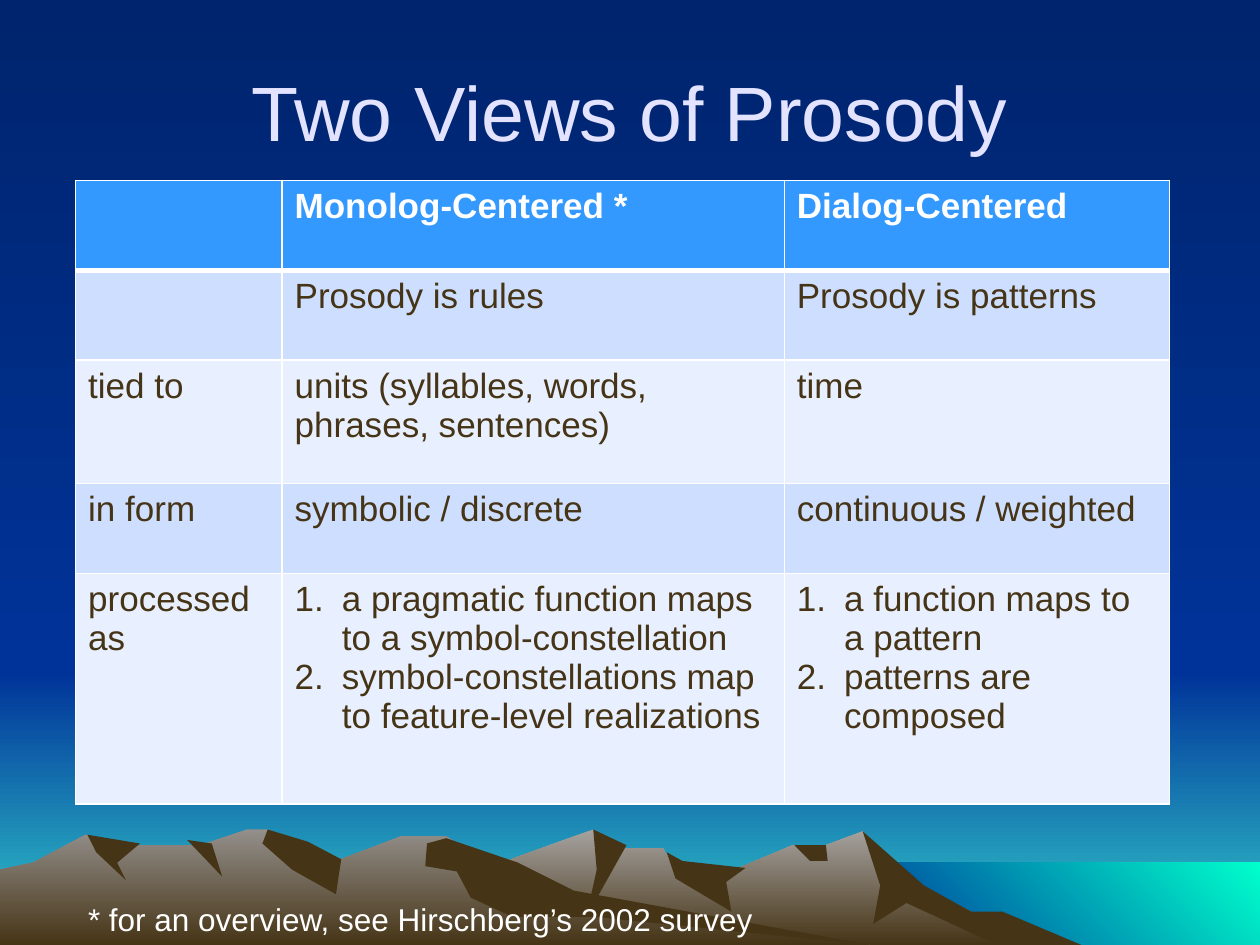
from pptx import Presentation
from pptx.dml.color import RGBColor
from pptx.enum.shapes import MSO_SHAPE
from pptx.enum.text import MSO_ANCHOR, PP_ALIGN
from pptx.oxml import parse_xml
from pptx.oxml.ns import nsdecls
from pptx.util import Pt

SLIDE_WIDTH, SLIDE_HEIGHT = 720, 540
FONT = "Arial"
NAVY, BLUE, BROWN, WHITE = "00246D", "003399", "463416", "FFFFFF"
HEADER_FILL, BAND_FILLS = "3399FF", ("CEDEFF", "E8EFFF")

# Outlines in points, back to front; a fill pair is a gradient from top to bottom.
RIDGES = [
    (("A5A29F", BROWN), [
        (591, 66), (520, 29), (493, 1), (472, 9), (453, 9), (408, 28), (386, 23),
        (379, 11), (350, 11), (339, 0), (284, 20), (235, 37), (186, 66)]),
    (BROWN, [
        (573, 47), (555, 47), (528, 32), (493, 1), (503, 32), (499, 54), (518, 42),
        (570, 66), (618, 66)]),
    (BROWN, [
        (339, 0), (341, 23), (335, 50), (358, 9)]),
    (BROWN, [
        (381, 13), (386, 28), (418, 47), (415, 30), (426, 22), (390, 18)]),
    (BROWN, [
        (454, 9), (463, 18), (473, 18), (472, 9)]),
    (("938F8B", BROWN), [
        (497, 66), (311, 39), (255, 4), (229, 4), (195, 17), (170, 17), (153, 0),
        (141, 0), (115, 9), (68, 9), (49, 3), (19, 19), (0, 23), (0, 66)]),
    (BROWN, [
        (153, 0), (150, 8), (167, 23), (192, 37), (195, 17), (176, 7)]),
    (BROWN, [
        (255, 5), (244, 8), (243, 21), (261, 24), (269, 39), (293, 50), (340, 50),
        (497, 66), (328, 35), (296, 19)]),
    (BROWN, [
        (107, 6), (121, 8), (127, 27)]),
    (BROWN, [
        (50, 3), (80, 8), (67, 19), (72, 29), (55, 13)]),
]

COLUMN_WIDTHS = (118, 287, 220)
ROW_HEIGHTS = (51.4, 51.4, 70.6, 51.2, 132)
# A list in a cell is numbered.
VIEWS = [
    ("", "Monolog-Centered *", "Dialog-Centered"),
    ("", "Prosody is rules", "Prosody is patterns"),
    ("tied to", "units (syllables, words, phrases, sentences)", "time"),
    ("in form", "symbolic / discrete", "continuous / weighted"),
    ("processed as",
     ["a pragmatic function maps to a symbol-constellation",
      "symbol-constellations map to feature-level realizations"],
     ["a function maps to a pattern", "patterns are composed"]),
]


def rgb(color):
    return RGBColor.from_string(color)


def paint(fill, color, angle=270):
    """Fill with one colour, or with a gradient between a pair of colours."""
    if isinstance(color, str):
        fill.solid()
        fill.fore_color.rgb = rgb(color)
        return
    fill.gradient()
    fill.gradient_angle = angle
    for stop, stop_color in zip(fill.gradient_stops, color):
        stop.color.rgb = rgb(stop_color)


def style(paragraph, size, color, bold=False):
    font = paragraph.font
    font.name, font.size, font.bold = FONT, Pt(size), bold
    font.color.rgb = rgb(color)


def finish(shape, color, angle=270):
    paint(shape.fill, color, angle)
    shape.line.fill.background()
    shape.shadow.inherit = False


def add_panel(slide, left, top, width, height, colors, angle=270):
    panel = slide.shapes.add_shape(
        MSO_SHAPE.RECTANGLE, Pt(left), Pt(top), Pt(width), Pt(height))
    finish(panel, colors, angle)


def add_sky_and_sea(slide, left, top, width, height):
    horizon, sea_left, sea_top = 384, 492, 493
    add_panel(slide, left, top + horizon, width, height - horizon, (BLUE, "33CCCC"))
    add_panel(slide, left, top, width, horizon, (NAVY, BLUE))
    add_panel(slide, left + sea_left, top + sea_top, width - sea_left,
              height - sea_top, (BLUE, "00FFCC"), angle=45)


def add_mountains(slide, left, top):
    for color, outline in RIDGES:
        builder = slide.shapes.build_freeform(*outline[0], scale=Pt(1))
        builder.add_line_segments(outline[1:], close=True)
        finish(builder.convert_to_shape(Pt(left), Pt(top)), color)


def add_title(slide, left, top, width, height):
    title = slide.shapes.title
    title.left, title.top, title.width, title.height = map(
        Pt, (left, top, width, height))
    title.text_frame.text = "Two Views of Prosody"
    title.text_frame.vertical_anchor = MSO_ANCHOR.MIDDLE
    heading = title.text_frame.paragraphs[0]
    heading.alignment = PP_ALIGN.CENTER
    style(heading, 44, "E3E3FF")
    title.element.getparent().append(title.element)  # in front of the scenery


def set_borders(cell, **widths):
    properties = cell._tc.get_or_add_tcPr()
    for side in "LRTB":
        properties.append(parse_xml(
            f'<a:ln{side} {nsdecls("a")} w="{Pt(widths.get(side, 1))}"><a:solidFill>'
            f'<a:srgbClr val="{WHITE}"/></a:solidFill></a:ln{side}>'))


def number(paragraph):
    properties = paragraph._p.get_or_add_pPr()
    properties.set("marL", str(Pt(27)))
    properties.set("indent", str(Pt(-27)))
    properties.insert(0, parse_xml(
        f'<a:buAutoNum {nsdecls("a")} type="arabicPeriod"/>'))


def fill_cell(cell, content, row):
    is_header = row == 0
    set_borders(cell, **({"B": 3} if is_header else {"T": 3} if row == 1 else {}))
    paint(cell.fill, HEADER_FILL if is_header else BAND_FILLS[(row - 1) % 2])
    numbered = isinstance(content, list)
    cell.text = "\n".join(content) if numbered else content
    for paragraph in cell.text_frame.paragraphs:
        if numbered:
            number(paragraph)
        style(paragraph, 20, WHITE if is_header else BROWN, is_header)


def add_views_table(slide, left, top):
    table = slide.shapes.add_table(
        len(VIEWS), len(COLUMN_WIDTHS), Pt(left), Pt(top),
        Pt(sum(COLUMN_WIDTHS)), Pt(sum(ROW_HEIGHTS))).table
    for column, width in zip(table.columns, COLUMN_WIDTHS):
        column.width = Pt(width)
    for row, (height, contents) in enumerate(zip(ROW_HEIGHTS, VIEWS)):
        table.rows[row].height = Pt(height)
        for column, content in enumerate(contents):
            fill_cell(table.cell(row, column), content, row)


def add_footnote(slide, left, top, width, height):
    footnote = slide.shapes.add_textbox(Pt(left), Pt(top), Pt(width), Pt(height))
    footnote.text_frame.word_wrap = False
    footnote.text_frame.text = "* for an overview, see Hirschberg’s 2002 survey"
    style(footnote.text_frame.paragraphs[0], 18, WHITE)


def main():
    presentation = Presentation()
    presentation.slide_width = Pt(SLIDE_WIDTH)
    presentation.slide_height = Pt(SLIDE_HEIGHT)
    slide = presentation.slides.add_slide(presentation.slide_layouts[5])
    paint(slide.background.fill, (NAVY, BLUE))
    add_sky_and_sea(slide, 0, 0, SLIDE_WIDTH, SLIDE_HEIGHT)
    add_mountains(slide, 0, 474)
    add_title(slide, 36, 18, 648, 90)
    add_views_table(slide, 43.2, 103)
    add_footnote(slide, 43.2, 511, 398, 29)
    presentation.save("out.pptx")


if __name__ == "__main__":
    main()
